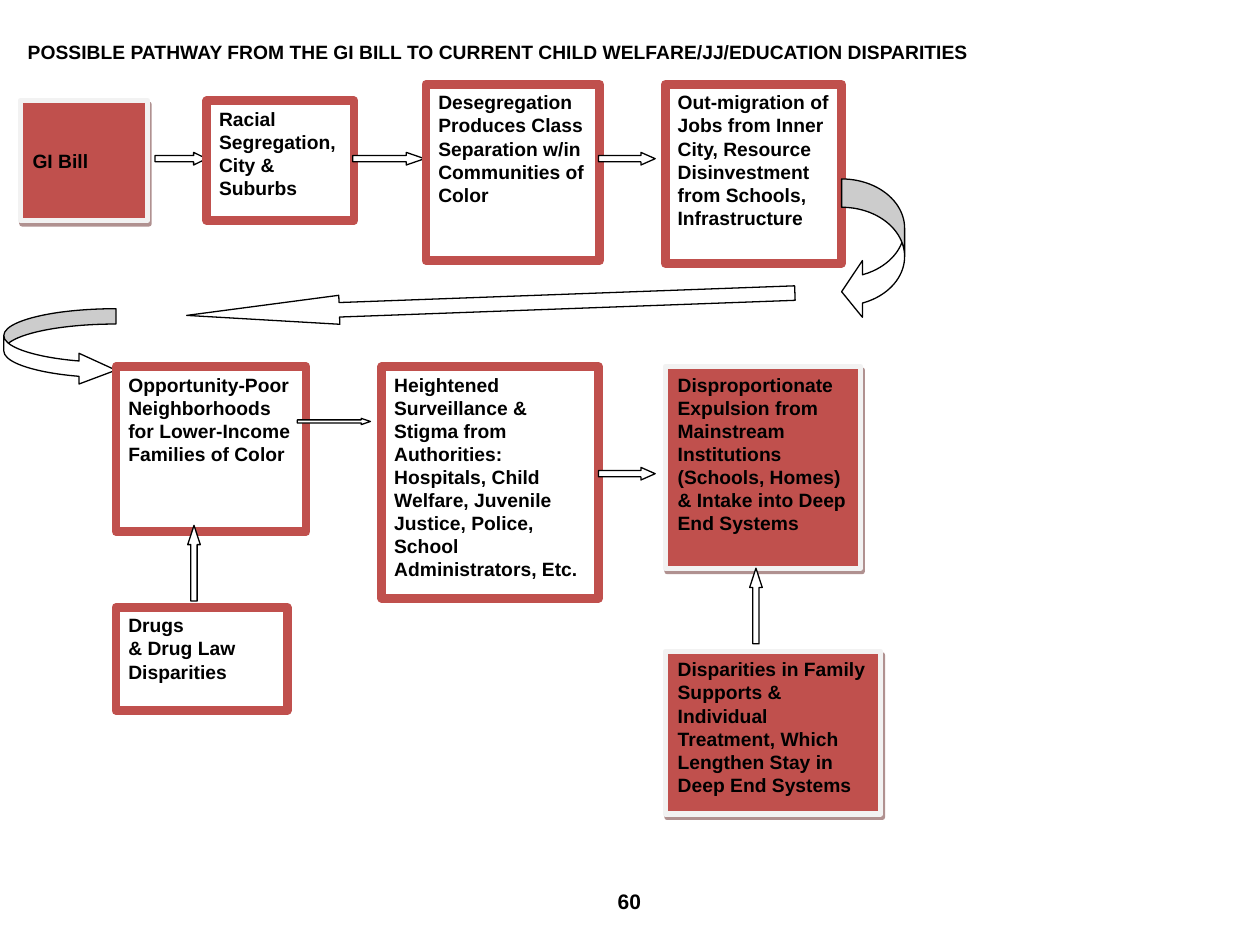
from dataclasses import dataclass

from lxml import etree
from pptx import Presentation
from pptx.dml.color import RGBColor
from pptx.enum.shapes import MSO_SHAPE
from pptx.enum.text import MSO_ANCHOR, PP_ALIGN
from pptx.oxml.ns import qn
from pptx.util import Inches, Pt

RECTANGLE = MSO_SHAPE.RECTANGLE
RIGHT, UP, DOWN = MSO_SHAPE.RIGHT_ARROW, MSO_SHAPE.UP_ARROW, MSO_SHAPE.DOWN_ARROW
CURVED_LEFT, CURVED_RIGHT = MSO_SHAPE.CURVED_LEFT_ARROW, MSO_SHAPE.CURVED_RIGHT_ARROW
TOP, MIDDLE = MSO_ANCHOR.TOP, MSO_ANCHOR.MIDDLE
LEFT_ALIGN, CENTER = PP_ALIGN.LEFT, PP_ALIGN.CENTER

RED, WHITE, PALE, BLACK, SHADOW = "C0504D", "FFFFFF", "F2F2F2", "000000", "622423"
FONT = {"name": "Arial", "size": Pt(11), "bold": True}


@dataclass
class Stage:
    left: float
    top: float
    width: float
    height: float
    text: str
    filled: bool = False
    anchor: int = TOP


@dataclass
class Arrow:
    kind: int
    left: float
    top: float
    width: float
    height: float
    adjustments: tuple
    rotation: float = 0


def color(hex_value: str) -> RGBColor:
    return RGBColor.from_string(hex_value)


def write(frame, text: str, align=LEFT_ALIGN, **font_changes) -> None:
    frame.word_wrap = True
    frame.text = text
    for paragraph in frame.paragraphs:
        paragraph.alignment = align
        font = paragraph.runs[0].font
        for attribute, value in {**FONT, **font_changes}.items():
            setattr(font, attribute, value)
        font.color.rgb = color(BLACK)


def paint(shape, fill: str, line: str, line_width: float) -> None:
    shape.shadow.inherit = False
    shape.fill.solid()
    shape.fill.fore_color.rgb = color(fill)
    shape.line.color.rgb = color(line)
    shape.line.width = Pt(line_width)


def add_drop_shadow(shape) -> None:
    effects = shape._element.spPr.find(qn("a:effectLst"))
    shadow = etree.SubElement(effects, qn("a:outerShdw"), blurRad="0", dist=str(Pt(2.2)),
                              dir=str(63 * 60000), algn="ctr", rotWithShape="0")
    tint = etree.SubElement(shadow, qn("a:srgbClr"), val=SHADOW)
    etree.SubElement(tint, qn("a:alpha"), val="50000")


def add_stage(slide, stage: Stage) -> None:
    box = slide.shapes.add_shape(RECTANGLE, Inches(stage.left), Inches(stage.top),
                                 Inches(stage.width), Inches(stage.height))
    if stage.filled:
        paint(box, RED, PALE, 3)
        add_drop_shadow(box)
    else:
        paint(box, WHITE, RED, 5)
    write(box.text_frame, stage.text)
    box.text_frame.vertical_anchor = stage.anchor


def add_arrow(slide, arrow: Arrow) -> None:
    shape = slide.shapes.add_shape(arrow.kind, Inches(arrow.left), Inches(arrow.top),
                                   Inches(arrow.width), Inches(arrow.height))
    for index, value in enumerate(arrow.adjustments):
        shape.adjustments[index] = value
    shape.rotation = arrow.rotation
    paint(shape, WHITE, BLACK, 0.75)


# Pathway from back to front: later parts overlap earlier ones
PATHWAY = [
    # Upper row
    Stage(0.16, 0.8, 1.01, 0.95, "GI Bill", filled=True, anchor=MIDDLE),
    Arrow(RIGHT, 1.23, 1.21, 0.41, 0.1, (0.5, 1.03)),
    Stage(1.64, 0.8, 1.17, 0.95, "Racial Segregation, City & Suburbs"),
    Arrow(RIGHT, 2.8, 1.21, 0.57, 0.1, (0.5, 1.45)),
    Stage(3.38, 0.67, 1.38, 1.4,
          "Desegregation Produces Class Separation w/in Communities of Color"),
    Arrow(RIGHT, 4.75, 1.21, 0.45, 0.1, (0.5, 1.13)),
    Stage(5.28, 0.67, 1.4, 1.42,
          "Out-migration of Jobs from Inner City, Resource Disinvestment "
          "from Schools, Infrastructure"),
    # Return sweep to the lower row
    Arrow(CURVED_LEFT, 6.68, 1.42, 0.5, 1.12, (0.45, 0.9, 0.33)),
    Arrow(DOWN, 3.78, 0, 0.23, 4.83, (0.5, 5.27), rotation=87.9),
    Arrow(CURVED_RIGHT, 0.03, 2.45, 0.89, 0.61, (0.2, 0.4, 0.48)),
    # Lower row
    Stage(0.92, 2.91, 1.51, 1.31,
          "Opportunity-Poor Neighborhoods for Lower-Income Families of Color"),
    Arrow(RIGHT, 2.36, 3.32, 0.58, 0.05, (0.5, 1.46)),
    Stage(3.03, 2.91, 1.72, 1.84,
          "Heightened Surveillance & Stigma from Authorities: Hospitals, Child Welfare, "
          "Juvenile Justice, Police, School Administrators, Etc."),
    Arrow(RIGHT, 4.75, 3.71, 0.45, 0.1, (0.5, 1.13)),
    Stage(5.28, 2.91, 1.55, 1.6,
          "Disproportionate Expulsion from Mainstream Institutions\n"
          "(Schools, Homes) & Intake into Deep End Systems", filled=True),
    # Contributing factors
    Arrow(UP, 1.49, 4.17, 0.1, 0.6, (0.5, 1.53)),
    Stage(0.92, 4.82, 1.36, 0.82, "Drugs\n& Drug Law Disparities"),
    Arrow(UP, 5.95, 4.51, 0.1, 0.6, (0.5, 1.53)),
    Stage(5.28, 5.17, 1.71, 1.29,
          "Disparities in Family Supports & Individual Treatment, Which Lengthen Stay "
          "in Deep End Systems", filled=True),
]


def main() -> None:
    presentation = Presentation()
    presentation.slide_width, presentation.slide_height = Inches(10), Inches(7.5)
    slide = presentation.slides.add_slide(presentation.slide_layouts[5])

    # Title
    title = slide.shapes.title
    title.left, title.top = Inches(0), Inches(0.02)
    title.width, title.height = Inches(9.48), Inches(1.15)
    write(title.text_frame,
          "POSSIBLE PATHWAY FROM THE GI BILL TO CURRENT CHILD WELFARE/JJ/EDUCATION DISPARITIES")
    title_format = {"vertical_anchor": TOP, "margin_left": Inches(0.22),
                    "margin_top": Inches(0.3)}
    for attribute, value in title_format.items():
        setattr(title.text_frame, attribute, value)

    # Stages and arrows
    for part in PATHWAY:
        if isinstance(part, Stage):
            add_stage(slide, part)
        else:
            add_arrow(slide, part)

    # Page number
    page_number = slide.shapes.add_textbox(Inches(4.62), Inches(7), Inches(0.75), Inches(0.5))
    write(page_number.text_frame, "60", CENTER, size=Pt(12))

    presentation.save("out.pptx")


if __name__ == "__main__":
    main()
